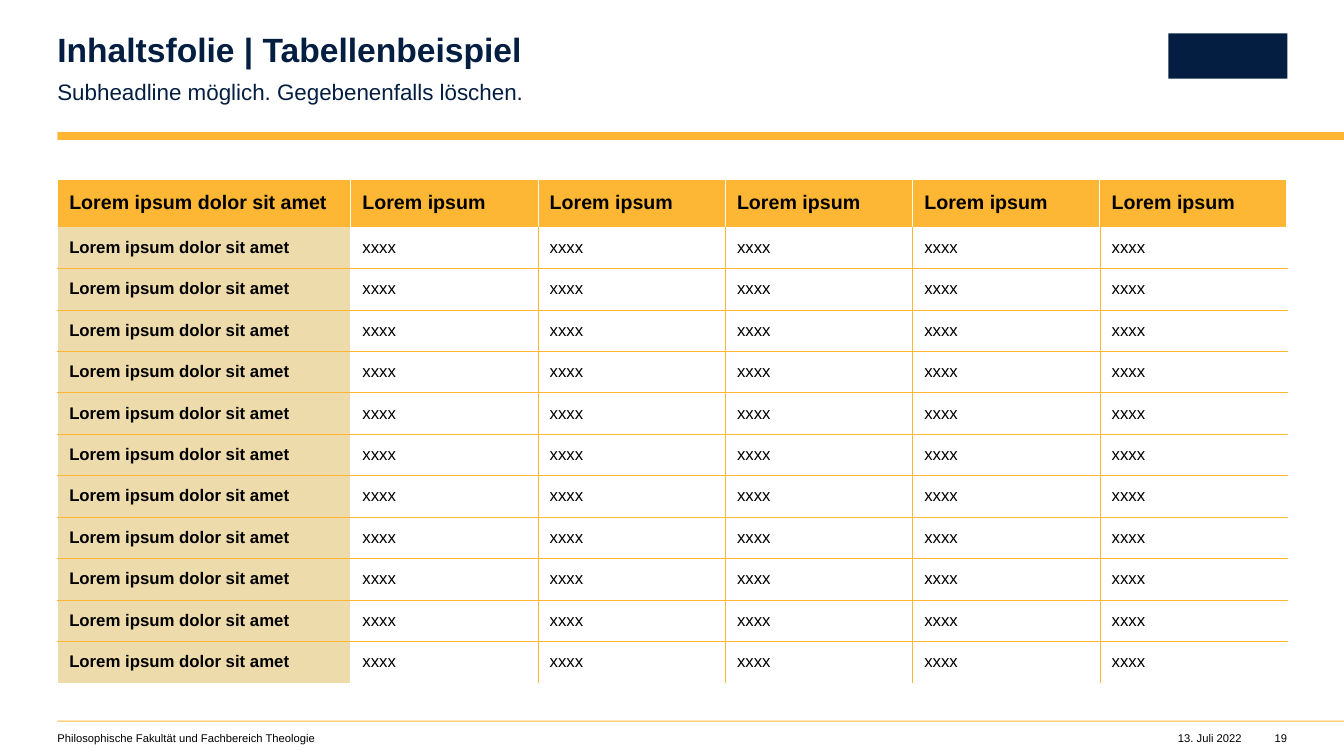
from lxml import etree
from pptx import Presentation
from pptx.dml.color import RGBColor
from pptx.enum.shapes import MSO_SHAPE
from pptx.enum.text import MSO_ANCHOR, PP_ALIGN
from pptx.oxml.ns import qn
from pptx.util import Pt

RECTANGLE = MSO_SHAPE.RECTANGLE
TOP, MIDDLE = MSO_ANCHOR.TOP, MSO_ANCHOR.MIDDLE
LEFT, RIGHT = PP_ALIGN.LEFT, PP_ALIGN.RIGHT
TITLE_ONLY = 5

NAVY, ORANGE, SAND = "041E42", "FDB735", "EEDBAC"
BLACK, WHITE = "000000", "FFFFFF"
SLIDE_WIDTH, SLIDE_HEIGHT = 960, 540
MARGIN = 41
CONTENT_WIDTH = 878.4
RIGHT_EDGE = MARGIN + CONTENT_WIDTH

DATA_ROWS, DATA_COLUMNS = 11, 5
LABEL_WIDTH, HEADER_HEIGHT, ROW_HEIGHT = 209.4, 33.8, 29.6
ROW_LABEL = "Lorem ipsum dolor sit amet"
TABLE_ROWS = [[ROW_LABEL] + ["Lorem ipsum"] * DATA_COLUMNS]
TABLE_ROWS += [[ROW_LABEL] + ["xxxx"] * DATA_COLUMNS for _ in range(DATA_ROWS)]


def rgb(value):
    return RGBColor.from_string(value)


class Page:
    """Holds the current slide and the style its elements share."""

    def __init__(self, slide, font_name="Arial"):
        self.slide = slide
        self.font_name = font_name

    def format_paragraph(self, paragraph, size, color, bold=False, align=LEFT):
        paragraph.alignment = align
        font = paragraph.font
        font.name, font.size, font.bold = self.font_name, Pt(size), bold
        font.color.rgb = rgb(color)

    def fill_frame(self, frame, content, size, color, **style):
        """Write one paragraph into a frame without margins and return it."""
        frame.margin_left = frame.margin_top = 0
        frame.margin_right = frame.margin_bottom = 0
        frame.vertical_anchor = TOP
        frame.word_wrap = True
        frame.text = content
        paragraph = frame.paragraphs[0]
        self.format_paragraph(paragraph, size, color, **style)
        return paragraph

    def title(self, content, left, top, width, height):
        headline = self.slide.shapes.title
        headline.left, headline.top = Pt(left), Pt(top)
        headline.width, headline.height = Pt(width), Pt(height)
        paragraph = self.fill_frame(headline.text_frame, content, 24, NAVY, bold=True)
        paragraph.line_spacing = 0.9

    def text(self, content, left, top, width, height, size, color, **style):
        box = self.slide.shapes.add_textbox(Pt(left), Pt(top), Pt(width), Pt(height))
        return self.fill_frame(box.text_frame, content, size, color, **style)

    def bar(self, left, top, width, height, color):
        block = self.slide.shapes.add_shape(
            RECTANGLE, Pt(left), Pt(top), Pt(width), Pt(height))
        block.shadow.inherit = False
        block.fill.solid()
        block.fill.fore_color.rgb = rgb(color)
        block.line.fill.background()

    def cell(self, cell, content, size, bold, fill, borders):
        """Format a cell; borders maps L, R, T, B to (colour, width) or None."""
        cell.text = content
        cell.vertical_anchor = MIDDLE
        cell.margin_left = cell.margin_right = Pt(8.5)
        cell.margin_top = cell.margin_bottom = Pt(2.8)
        self.format_paragraph(cell.text_frame.paragraphs[0], size, BLACK, bold)
        properties = cell._tc.get_or_add_tcPr()
        for side, border in borders.items():
            edge = etree.SubElement(properties, qn(f"a:ln{side}"))
            if border is None:
                etree.SubElement(edge, qn("a:noFill"))
                continue
            color, width = border
            edge.set("w", str(Pt(width)))
            solid = etree.SubElement(edge, qn("a:solidFill"))
            etree.SubElement(solid, qn("a:srgbClr"), val=color)
        if fill:
            cell.fill.solid()
            cell.fill.fore_color.rgb = rgb(fill)
        else:
            cell.fill.background()

    def table(self, rows, left, top, widths, heights):
        table = self.slide.shapes.add_table(
            len(rows), len(widths), Pt(left), Pt(top),
            Pt(sum(widths)), Pt(sum(heights))).table
        table.horz_banding = False
        for column, width in zip(table.columns, widths):
            column.width = Pt(width)
        for row, height in zip(table.rows, heights):
            row.height = Pt(height)

        white, thin_white, orange = (WHITE, 1), (WHITE, 0.5), (ORANGE, 0.25)
        last_row, last_column = len(rows) - 1, len(widths) - 1
        for r, row in enumerate(rows):
            for c, content in enumerate(row):
                header, label = r == 0, c == 0
                inner = thin_white if header else orange
                beside_label = not header and c <= 1
                borders = {
                    "L": white if label or beside_label else inner,
                    "R": white if c == last_column or (label and not header) else inner,
                    "T": white if header else orange if r > 1 else None,
                    "B": None if header or r == last_row else orange,
                }
                fill = ORANGE if header else SAND if label else None
                self.cell(table.cell(r, c), content, 14 if header else 12,
                          header or label, fill, borders)


def main():
    deck = Presentation()
    deck.slide_width, deck.slide_height = Pt(SLIDE_WIDTH), Pt(SLIDE_HEIGHT)
    page = Page(deck.slides.add_slide(deck.slide_layouts[TITLE_ONLY]))

    page.bar(MARGIN, 94.3, SLIDE_WIDTH - MARGIN, 5.7, ORANGE)
    page.bar(MARGIN, 514.8, SLIDE_WIDTH - MARGIN, 0.6, ORANGE)
    page.bar(834.5, 23.8, 85, 32.4, NAVY)

    page.title("Inhaltsfolie | Tabellenbeispiel", MARGIN, 23.8, 539, 26)
    subheadline = page.text("Subheadline möglich. Gegebenenfalls löschen.",
                            MARGIN, 54, 539, 19.4, 16, NAVY)
    subheadline.line_spacing = 1.1
    subheadline.space_after = Pt(12)

    page.table(TABLE_ROWS, MARGIN, 128.2,
               [LABEL_WIDTH] + [(CONTENT_WIDTH - LABEL_WIDTH) / DATA_COLUMNS] * DATA_COLUMNS,
               [HEADER_HEIGHT] + [ROW_HEIGHT] * DATA_ROWS)

    footer_top, footer_height = 522.7, 9.4
    page.text("Philosophische Fakultät und Fachbereich Theologie",
              MARGIN, footer_top, 430.6, footer_height, 8, BLACK)
    page.text("13. Juli 2022", 820, footer_top, 67, footer_height, 8, BLACK, align=RIGHT)
    page.text("19", RIGHT_EDGE - 15, footer_top, 15, footer_height, 8, BLACK, align=RIGHT)

    deck.save("out.pptx")


if __name__ == "__main__":
    main()
